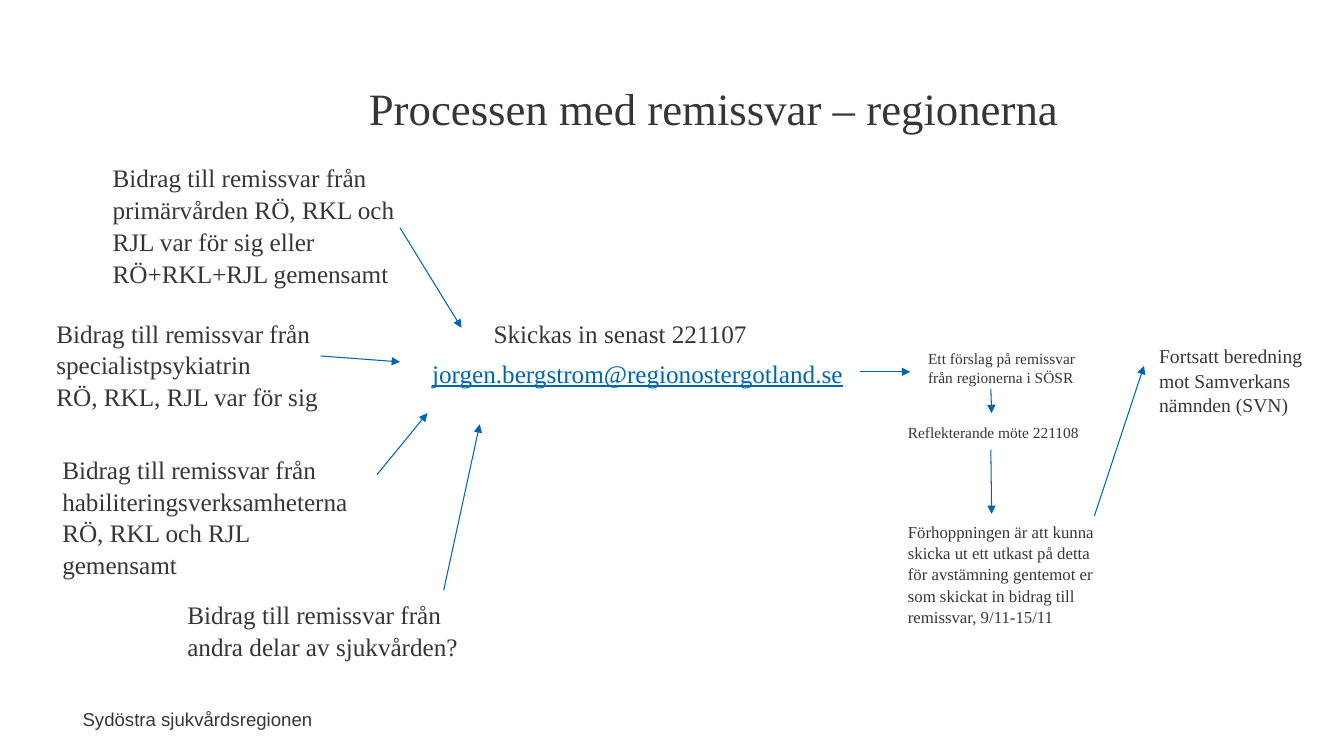
from dataclasses import dataclass

from lxml.etree import SubElement
from pptx import Presentation
from pptx.dml.color import RGBColor as RGB
from pptx.enum.shapes import MSO_CONNECTOR as Link
from pptx.enum.text import MSO_ANCHOR as Anchor, PP_ALIGN as Align
from pptx.oxml.ns import qn
from pptx.util import Cm, Pt


@dataclass
class Theme:
    ink = RGB.from_string("363636")
    mail = RGB.from_string("0066B3")
    line = RGB.from_string("0064AF")
    serif = "Times New Roman"
    sans = "Arial"
    title, body, next, note, small, foot = 32, 18, 14, 12, 11, 13.3
    lead = 1.05


theme = Theme()


def write(shape, size, *lines, font=theme.serif, color=theme.ink):
    """Fill a shape with one paragraph per line."""
    frame = shape.text_frame
    frame.word_wrap = True
    frame.vertical_anchor = Anchor.TOP
    for i, line in enumerate(lines):
        para = frame.add_paragraph() if i else frame.paragraphs[0]
        para.alignment = Align.LEFT
        para.line_spacing = theme.lead
        run = para.add_run()
        run.text = line
        run.font.size = Pt(size)
        run.font.name = font
        run.font.color.rgb = color
    return frame


def place(x, y, w, h):
    """Add a text box, measured in centimetres."""
    return slide.shapes.add_textbox(Cm(x), Cm(y), Cm(w), Cm(h))


deck = Presentation()
deck.slide_width, deck.slide_height = Cm(33.87), Cm(19.05)
slide = deck.slides.add_slide(deck.slide_layouts[5])

# Title
title = slide.shapes.title
title.left, title.top = Cm(9.04), Cm(1.83)
title.width, title.height = Cm(22.4), Cm(1.63)
write(title, theme.title, "Processen med remissvar – regionerna")

# Contributions, deadline and the steps that follow
boxes = [
    (2.59, 3.94, 8.18, 3.33, theme.body,
     ["Bidrag till remissvar från primärvården RÖ, RKL och RJL var för sig "
      "eller RÖ+RKL+RJL gemensamt"]),
    (1.17, 7.85, 8.18, 2.57, theme.body,
     ["Bidrag till remissvar från specialistpsykiatrin",
      "RÖ, RKL, RJL var för sig"]),
    (1.32, 11.28, 8.18, 3.33, theme.body,
     ["Bidrag till remissvar från habiliteringsverksamheterna",
      "RÖ, RKL och RJL gemensamt"]),
    (4.47, 14.94, 8.23, 1.8, theme.body,
     ["Bidrag till remissvar från andra delar av sjukvården?"]),
    (12.19, 7.85, 7.85, 1.02, theme.body, ["Skickas in senast 221107"]),
    (23.14, 8.64, 4.22, 1.19, theme.small,
     ["Ett förslag på remissvar", "från regionerna i SÖSR"]),
    (22.63, 10.52, 6.78, 0.74, theme.small, ["Reflekterande möte 221108"]),
    (22.63, 13, 5.54, 2.82, theme.note,
     ["Förhoppningen är att kunna skicka ut ett utkast på detta för avstämning "
      "gentemot er som skickat in bidrag till remissvar, 9/11-15/11"]),
    (28.96, 8.51, 4.52, 2.06, theme.next,
     ["Fortsatt beredning mot Samverkans", "nämnden (SVN)"]),
]
for *area, size, lines in boxes:
    write(place(*area), size, *lines)

# Mail address
mail = write(place(10.64, 8.86, 11.02, 1.02), theme.body,
             "jorgen.bergstrom@regionostergotland.se", color=theme.mail)
mail.paragraphs[0].runs[0].font.underline = True

# Arrows
arrows = [
    (10.08, 5.74, 11.63, 8.26),
    (8.08, 8.97, 10.08, 9.12),
    (9.5, 11.96, 10.77, 10.41),
    (11.18, 14.88, 12.09, 10.69),
    (21.67, 9.37, 22.94, 9.37),
    (24.97, 9.8, 24.99, 10.41),
    (24.97, 11.33, 24.99, 12.95),
    (27.58, 13, 28.83, 9.22),
]
for ends in arrows:
    arrow = slide.shapes.add_connector(Link.STRAIGHT, *map(Cm, ends))
    arrow.line.color.rgb = theme.line
    arrow.line.width = Pt(0.75)
    SubElement(arrow.line._get_or_add_ln(), qn("a:tailEnd"), type="triangle")
    SubElement(arrow._element.spPr, qn("a:effectLst"))

# Footer
foot = write(place(1.78, 17.68, 6.35, 0.84), theme.foot,
             "Sydöstra sjukvårdsregionen", font=theme.sans)
foot.word_wrap = False
foot.paragraphs[0].alignment = Align.RIGHT

deck.save("out.pptx")
